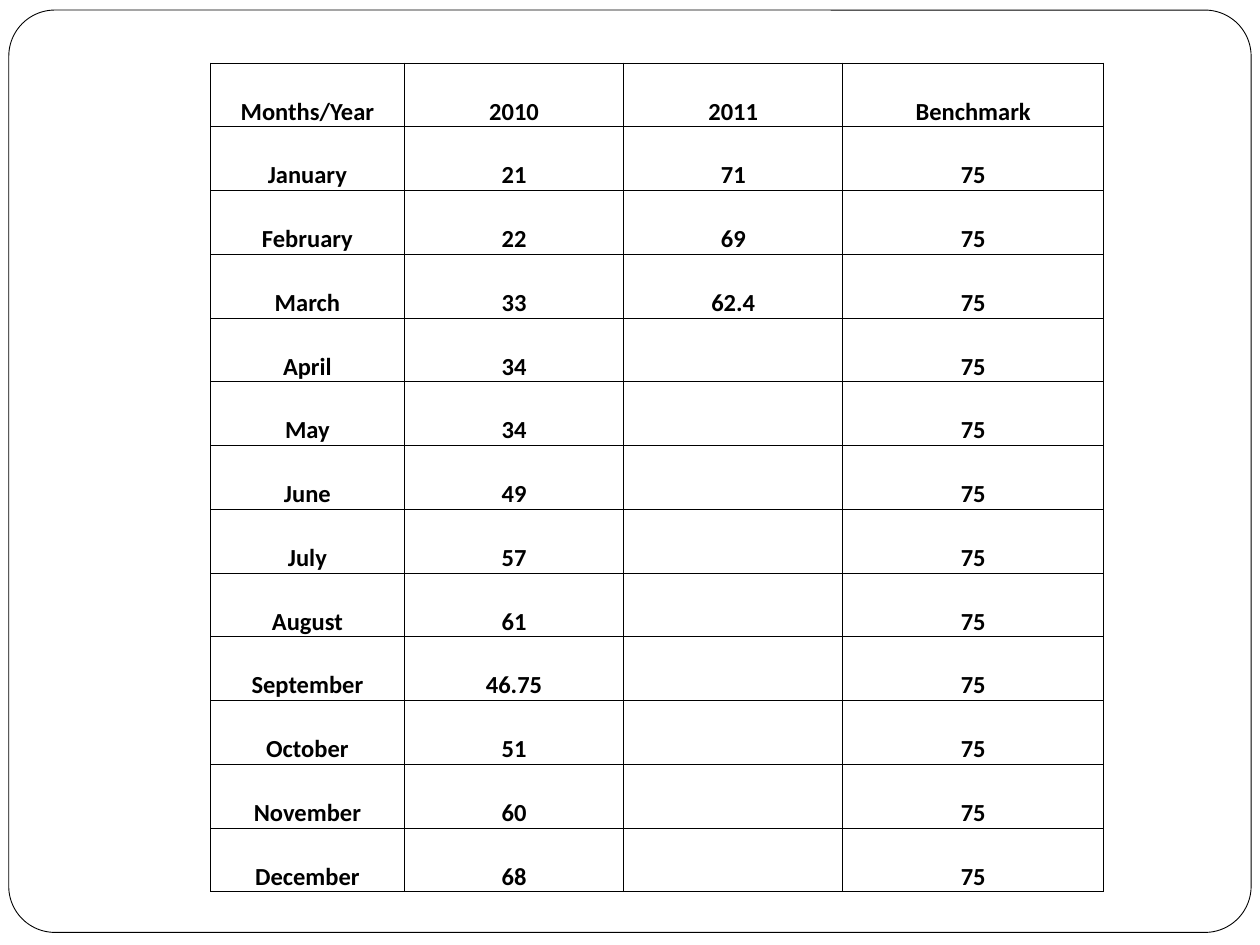
from dataclasses import dataclass

from lxml.etree import SubElement
from pptx import Presentation
from pptx.dml.color import RGBColor
from pptx.enum.shapes import MSO_SHAPE
from pptx.enum.text import MSO_ANCHOR, PP_ALIGN
from pptx.oxml.ns import qn
from pptx.slide import Slide
from pptx.table import _Cell
from pptx.util import Inches, Pt

BLACK, WHITE = "000000", "FFFFFF"
LINE_WIDTH = Pt(0.5)
HEADERS = ("Months/Year", "2010", "2011", "Benchmark")
COLUMN_WIDTHS = (1.54, 1.74, 1.74, 2.07)
TABLE_LEFT, TABLE_TOP, TABLE_HEIGHT = 1.67, 0.5, 6.58
FONT = {"name": "Calibri", "size": Pt(14), "bold": True}
CELL_FORMAT = {
    "margin_left": 0,
    "margin_right": 0,
    "margin_top": 0,
    "margin_bottom": 0,
    "vertical_anchor": MSO_ANCHOR.BOTTOM,
}


@dataclass(frozen=True)
class MonthRow:
    month: str
    y2010: str
    y2011: str = ""
    benchmark: str = "75"

    def texts(self) -> tuple[str, ...]:
        return self.month, self.y2010, self.y2011, self.benchmark


MONTHS = (
    MonthRow("January", "21", "71"),
    MonthRow("February", "22", "69"),
    MonthRow("March", "33", "62.4"),
    MonthRow("April", "34"),
    MonthRow("May", "34"),
    MonthRow("June", "49"),
    MonthRow("July", "57"),
    MonthRow("August", "61"),
    MonthRow("September", "46.75"),
    MonthRow("October", "51"),
    MonthRow("November", "60"),
    MonthRow("December", "68"),
)


def color(value: str) -> RGBColor:
    return RGBColor.from_string(value)


def set_format(target: object, values: dict) -> None:
    for name, value in values.items():
        setattr(target, name, value)


def draw_frame(s: Slide) -> None:
    sp = s.shapes.add_shape(
        MSO_SHAPE.ROUNDED_RECTANGLE,
        Inches(0.07), Inches(0.08), Inches(9.86), Inches(7.32),
    )
    sp.adjustments[0] = 0.05
    sp.shadow.inherit = False
    sp.fill.solid()
    sp.fill.fore_color.rgb = color(WHITE)
    sp.line.color.rgb = color(BLACK)
    sp.line.width = LINE_WIDTH


def add_borders(cell: _Cell) -> None:
    tc_pr = cell._tc.get_or_add_tcPr()
    for index, side in enumerate(("lnL", "lnR", "lnT", "lnB")):
        ln = SubElement(tc_pr, qn(f"a:{side}"), w=str(LINE_WIDTH))
        fill = SubElement(ln, qn("a:solidFill"))
        SubElement(fill, qn("a:srgbClr"), val=BLACK)
        tc_pr.insert(index, ln)


def fill_cell(cell: _Cell, text: str) -> None:
    set_format(cell, CELL_FORMAT)
    cell.fill.background()
    add_borders(cell)
    if text:
        p = cell.text_frame.paragraphs[0]
        p.alignment = PP_ALIGN.CENTER
        r = p.add_run()
        r.text = text
        set_format(r.font, FONT)
        r.font.color.rgb = color(BLACK)


def draw_table(s: Slide) -> None:
    rows = [HEADERS, *(month.texts() for month in MONTHS)]
    table = s.shapes.add_table(
        len(rows), len(HEADERS),
        Inches(TABLE_LEFT), Inches(TABLE_TOP),
        Inches(sum(COLUMN_WIDTHS)), Inches(TABLE_HEIGHT),
    ).table
    set_format(table, {"first_row": False, "horz_banding": False})
    for column, width in zip(table.columns, COLUMN_WIDTHS):
        column.width = Inches(width)
    for row, texts in zip(table.rows, rows):
        row.height = Inches(TABLE_HEIGHT / len(rows))
        for cell, text in zip(row.cells, texts):
            fill_cell(cell, text)


def main() -> None:
    """Build the slide with the monthly benchmark table."""
    prs = Presentation()
    prs.slide_width, prs.slide_height = Inches(10), Inches(7.5)
    s = prs.slides.add_slide(prs.slide_layouts[6])
    draw_frame(s)
    draw_table(s)
    prs.save("out.pptx")


if __name__ == "__main__":
    main()
